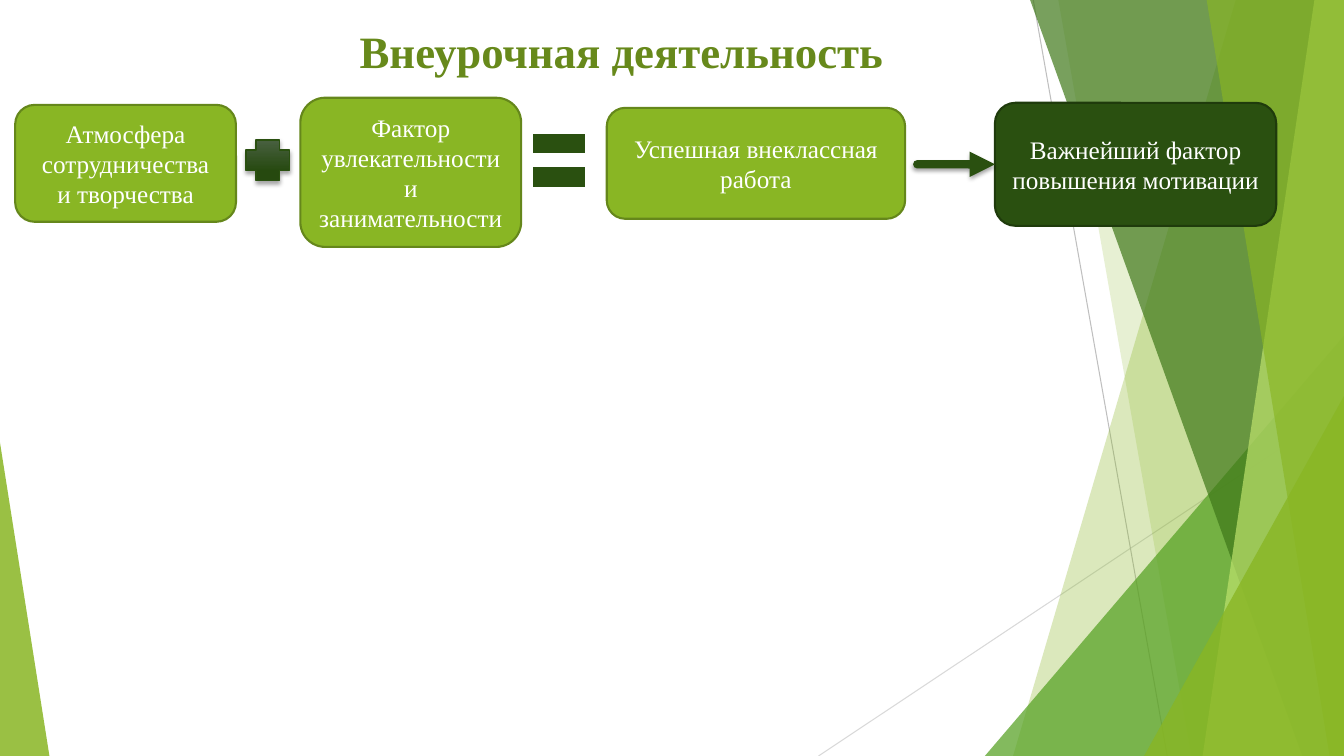
from dataclasses import dataclass

from lxml import etree
from pptx import Presentation
from pptx.dml.color import RGBColor
from pptx.enum.shapes import MSO_CONNECTOR, MSO_SHAPE
from pptx.enum.text import MSO_ANCHOR, MSO_AUTO_SIZE, PP_ALIGN
from pptx.oxml import parse_xml
from pptx.oxml.ns import nsdecls, qn
from pptx.util import Inches, Pt

STRAIGHT = MSO_CONNECTOR.STRAIGHT
ROUNDED = MSO_SHAPE.ROUNDED_RECTANGLE
PLUS, EQUAL = MSO_SHAPE.CROSS, MSO_SHAPE.MATH_EQUAL
CENTER, MIDDLE = PP_ALIGN.CENTER, MSO_ANCHOR.MIDDLE
NO_AUTOFIT = MSO_AUTO_SIZE.NONE
LEFT_SIDE = 1
TITLE_ONLY_LAYOUT = 5

WIDTH, HEIGHT = Inches(13.333), Inches(7.5)


@dataclass(frozen=True)
class Theme:
    font: str = "Times New Roman"
    title_size: int = 32
    body_size: int = 18
    white: str = "FFFFFF"
    title: str = "67891B"
    lime: str = "89B624"
    lime_edge: str = "65871B"
    pale_lime: str = "BEE26D"
    leaf: str = "54A021"
    forest: str = "3F7819"
    dark: str = "2A5010"
    dark_edge: str = "1F3B0C"
    plus_top: str = "486040"
    plus_bottom: str = "26490F"


THEME = Theme()


@dataclass(frozen=True)
class Area:
    """A rectangle in percent of the slide's width and height."""
    left: float
    top: float
    width: float
    height: float

    def emu(self) -> tuple[int, int, int, int]:
        return x(self.left), y(self.top), x(self.width), y(self.height)


@dataclass(frozen=True)
class Facet:
    points: list[tuple[float, float]]
    color: str
    opacity: int


@dataclass(frozen=True)
class Box:
    area: Area
    lines: list[str]
    fill: str = THEME.lime
    edge: str = THEME.lime_edge


def x(percent: float) -> int:
    return round(WIDTH * percent / 100)


def y(percent: float) -> int:
    return round(HEIGHT * percent / 100)


def band(top: float, bottom: float) -> list[tuple[float, float]]:
    """Corners of a full-height facet that reaches the right edge."""
    return [(top, 0), (bottom, 100), (100, 100), (100, 0)]


def wedge(left: float, top: float) -> list[tuple[float, float]]:
    """Corners of a triangle in the lower right corner."""
    return [(left, 100), (100, top), (100, 100)]


RULES = [((60.9, 100), (100, 53.73), "D9D9D9"), ((76.88, 0), (86.85, 100), "BFBFBF")]
FACETS = [
    Facet(band(91.95, 75.38), THEME.lime, 30),
    Facet(band(78.75, 88.65), THEME.lime, 20),
    Facet(wedge(73.28, 44.4), THEME.leaf, 72),
    Facet(band(76.65, 96.9), THEME.forest, 70),
    Facet(band(97.8, 89.48), THEME.pale_lime, 70),
    Facet(band(89.78, 98.93), THEME.lime, 65),
    Facet(wedge(85.13, 52.4), THEME.lime, 80),
    Facet([(0, 58.53), (3.68, 100), (0, 100)], THEME.lime, 85),
]
TITLE_AREA = Area(13.73, 1.87, 65.03, 9.6)
PLUS_AREA = Area(18.3, 18.53, 3.23, 5.33)
EQUAL_AREA = Area(38.85, 14.93, 5.55, 12.53)
ARROW_START, ARROW_END = (68.25, 21.73), (74.03, 21.73)
BOXES = [
    Box(Area(1.13, 13.87, 16.43, 15.47), ["Атмосфера сотрудничества", "и творчества"]),
    Box(Area(22.35, 12.93, 16.43, 19.73), ["Фактор увлекательности и занимательности"]),
    Box(Area(45.15, 14.27, 22.2, 14.67), ["Успешная внеклассная работа"]),
    Box(Area(74.03, 13.6, 20.93, 16.27), ["Важнейший фактор повышения мотивации"],
        THEME.dark, THEME.dark_edge),
]


def rgb(color: str) -> RGBColor:
    return RGBColor.from_string(color)


def paint(shape, fill: str, edge: str | None = None, weight: float = 0) -> None:
    shape.shadow.inherit = False
    shape.fill.solid()
    shape.fill.fore_color.rgb = rgb(fill)
    if edge is None:
        shape.line.fill.background()
    else:
        shape.line.color.rgb = rgb(edge)
        shape.line.width = Pt(weight)


def format_paragraph(paragraph, size: int, color: str, bold: bool = False) -> None:
    paragraph.alignment = CENTER
    font = paragraph.font
    font.name, font.size, font.bold = THEME.font, Pt(size), bold
    font.color.rgb = rgb(color)


def set_effects(properties, shadow: bool) -> None:
    """Replace inherited effects by a soft drop shadow or by none."""
    for effects in properties.findall(qn("a:effectLst")):
        properties.remove(effects)
    content = (
        '<a:outerShdw blurRad="38100" dist="25400" dir="5400000" rotWithShape="0">'
        '<a:srgbClr val="000000"><a:alpha val="35000"/></a:srgbClr></a:outerShdw>'
    ) if shadow else ""
    properties.append(parse_xml(
        f'<a:effectLst {nsdecls("a")}>{content}</a:effectLst>'))


def add_line(slide, start: tuple[float, float], end: tuple[float, float],
             color: str, weight: float, shadow: bool = False):
    line = slide.shapes.add_connector(
        STRAIGHT, x(start[0]), y(start[1]), x(end[0]), y(end[1]))
    line.line.color.rgb = rgb(color)
    line.line.width = Pt(weight)
    set_effects(line._element.spPr, shadow)
    return line


def add_facet(slide, facet: Facet) -> None:
    corners = [(x(left), y(top)) for left, top in facet.points]
    builder = slide.shapes.build_freeform(*corners[0])
    builder.add_line_segments(corners[1:], close=True)
    shape = builder.convert_to_shape()
    paint(shape, facet.color)
    color = shape._element.spPr.find(qn("a:solidFill"))[0]
    etree.SubElement(color, qn("a:alpha"), val=str(facet.opacity * 1000))


def add_box(slide, box: Box):
    shape = slide.shapes.add_shape(ROUNDED, *box.area.emu())
    paint(shape, box.fill, box.edge, 1.5)
    frame = shape.text_frame
    frame.word_wrap, frame.vertical_anchor = True, MIDDLE
    frame.text = "\n".join(box.lines)
    for paragraph in frame.paragraphs:
        format_paragraph(paragraph, THEME.body_size, THEME.white)
    return shape


def add_title(slide) -> None:
    title = slide.shapes.title
    title.left, title.top, title.width, title.height = TITLE_AREA.emu()
    frame = title.text_frame
    frame.text = "Внеурочная деятельность"
    frame.auto_size, frame.vertical_anchor = NO_AUTOFIT, MIDDLE
    format_paragraph(frame.paragraphs[0], THEME.title_size, THEME.title, bold=True)


def add_signs(slide) -> None:
    """Draw the plus and equals signs between the boxes."""
    plus = slide.shapes.add_shape(PLUS, *PLUS_AREA.emu())
    paint(plus, THEME.dark, THEME.dark, 1)
    plus.fill.gradient()
    plus.fill.gradient_angle = 270
    stops = ((0, THEME.plus_top), (0.78, THEME.plus_bottom))
    for stop, (position, color) in zip(plus.fill.gradient_stops, stops):
        stop.position, stop.color.rgb = position, rgb(color)
    set_effects(plus._element.spPr, shadow=True)
    equal = slide.shapes.add_shape(EQUAL, *EQUAL_AREA.emu())
    paint(equal, THEME.dark, THEME.white, 2)


def add_arrow(slide, target) -> None:
    arrow = add_line(slide, ARROW_START, ARROW_END, THEME.dark, 6, shadow=True)
    arrow.end_connect(target, LEFT_SIDE)
    outline = arrow.line._get_or_add_ln()
    outline.set("cap", "rnd")
    etree.SubElement(outline, qn("a:tailEnd"), type="triangle")


def main() -> None:
    presentation = Presentation()
    presentation.slide_width, presentation.slide_height = WIDTH, HEIGHT
    slide = presentation.slides.add_slide(presentation.slide_layouts[TITLE_ONLY_LAYOUT])
    for start, end, color in RULES:
        add_line(slide, start, end, color, 0.75)
    for facet in FACETS:
        add_facet(slide, facet)
    add_title(slide)
    boxes = [add_box(slide, box) for box in BOXES]
    add_signs(slide)
    add_arrow(slide, boxes[-1])
    presentation.save("out.pptx")


if __name__ == "__main__":
    main()
